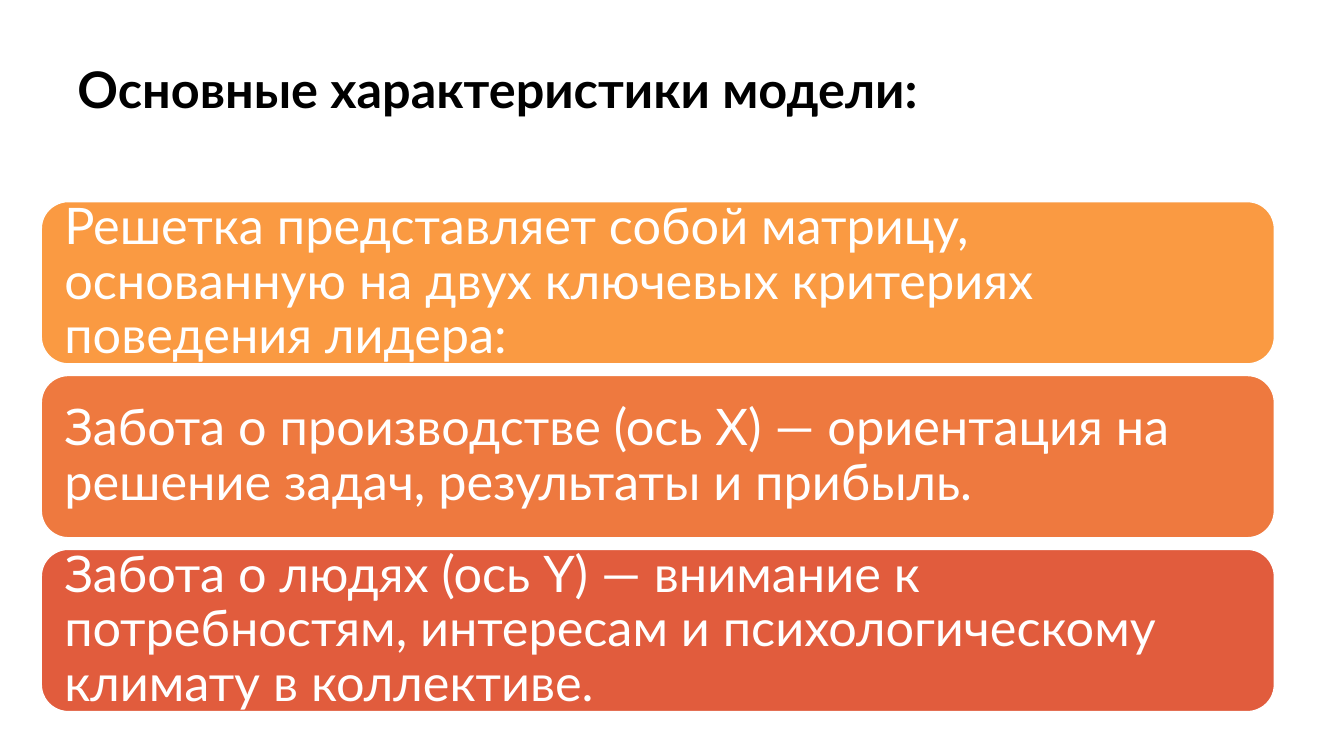
from pptx import Presentation
from pptx.dml.color import RGBColor
from pptx.enum.shapes import MSO_SHAPE
from pptx.enum.text import MSO_ANCHOR, PP_ALIGN
from pptx.util import Inches, Pt

BLACK = RGBColor(0x00, 0x00, 0x00)
WHITE = RGBColor(0xFF, 0xFF, 0xFF)
AMBER = RGBColor(0xFA, 0x9A, 0x42)
ORANGE = RGBColor(0xEE, 0x79, 0x3F)
RED = RGBColor(0xE1, 0x5C, 0x3D)

CARDS = [
    (AMBER, "Решетка представляет собой матрицу, основанную на двух "
            "ключевых критериях поведения лидера:"),
    (ORANGE, "Забота о производстве (ось X) — ориентация на решение задач, "
             "результаты и прибыль."),
    (RED, "Забота о людях (ось Y) — внимание к потребностям, интересам и "
          "психологическому климату в коллективе."),
]
CARD_TOP, CARD_STEP = 2.0, 1.725


def write(tf, text, color, bold=False):
    tf.word_wrap = True
    p = tf.paragraphs[0]
    p.alignment = PP_ALIGN.LEFT
    p.line_spacing = 0.9
    r = p.add_run()
    r.text = text
    font = {"name": "Lato", "size": Pt(36), "bold": bold}
    for name, value in font.items():
        setattr(r.font, name, value)
    r.font.color.rgb = color


prs = Presentation()
prs.slide_width, prs.slide_height = Inches(13.33), Inches(7.5)
s = prs.slides.add_slide(prs.slide_layouts[6])

# Title
title = s.shapes.add_textbox(Inches(0.67), Inches(0.6), Inches(9.41), Inches(0.7))
write(title.text_frame, "Основные характеристики модели:", BLACK, bold=True)

# Stacked cards
for i, (fill, text) in enumerate(CARDS):
    sp = s.shapes.add_shape(MSO_SHAPE.ROUNDED_RECTANGLE, Inches(0.41),
                            Inches(CARD_TOP + i * CARD_STEP), Inches(12.23), Inches(1.61))
    sp.shadow.inherit = False
    sp.fill.solid()
    sp.fill.fore_color.rgb = fill
    sp.line.color.rgb = WHITE
    sp.line.width = Pt(1)
    tf = sp.text_frame
    tf.vertical_anchor = MSO_ANCHOR.MIDDLE
    for side in ("left", "right", "top", "bottom"):
        setattr(tf, f"margin_{side}", Inches(0.15))
    write(tf, text, WHITE)

prs.save("out.pptx")
